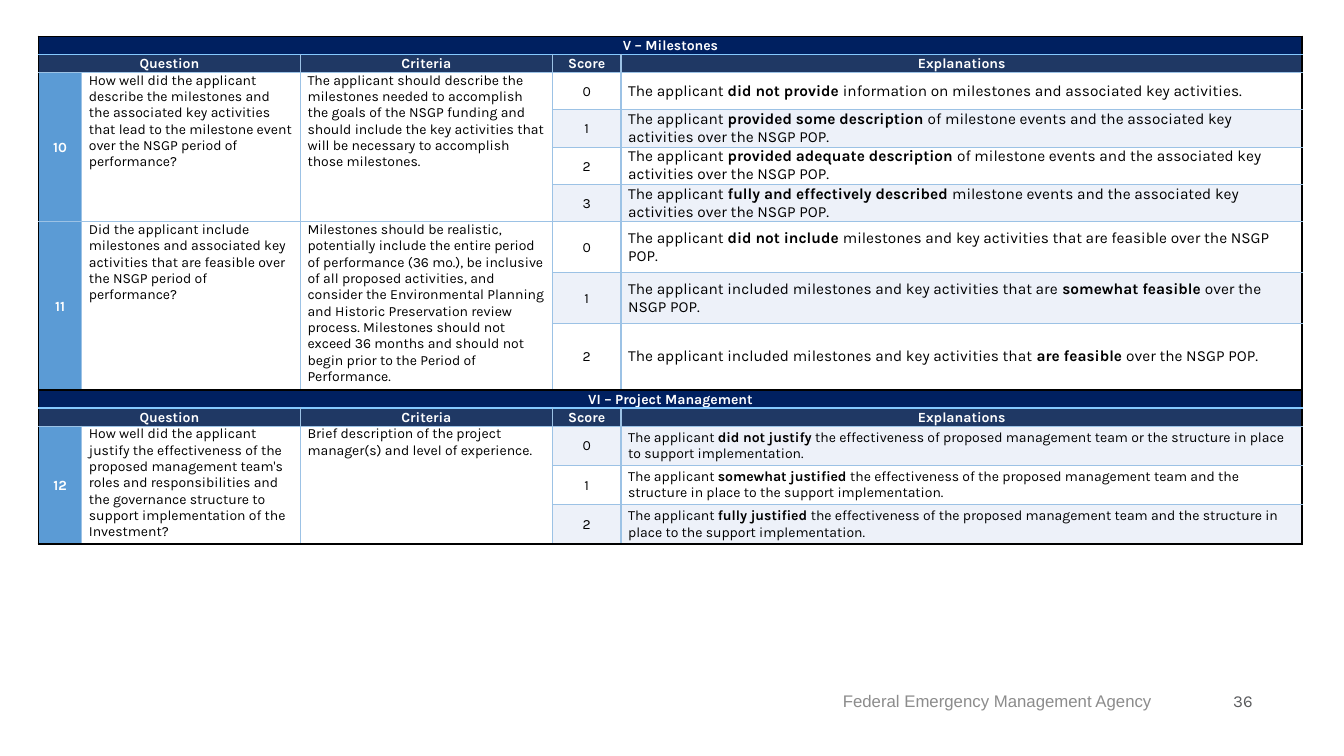
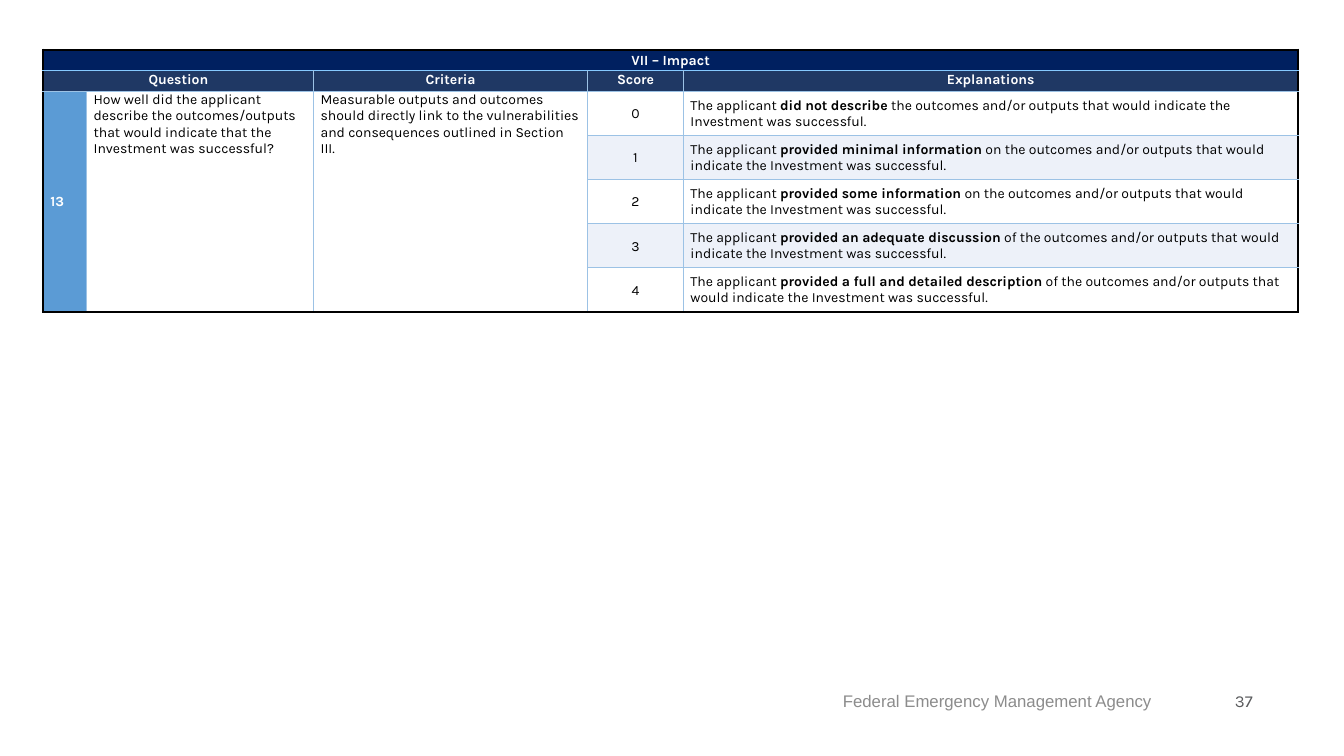
from dataclasses import dataclass, replace
from itertools import product

from pptx import Presentation
from pptx.dml.color import RGBColor as RGB
from pptx.enum.text import MSO_ANCHOR as ANCHOR, PP_ALIGN as ALIGN
from pptx.oxml import parse_xml
from pptx.oxml.ns import nsdecls
from pptx.util import Cm, Pt

NAVY = RGB(0x00, 0x20, 0x60)
DUSK = RGB(0x1F, 0x38, 0x64)
BLUE = RGB(0x5B, 0x9B, 0xD5)
PALE = RGB(0xED, 0xF1, 0xF9)
LINE = RGB(0x9C, 0xC2, 0xE5)
SKY = RGB(0x85, 0xC9, 0xFF)
BLACK = RGB(0x00, 0x00, 0x00)
WHITE = RGB(0xFF, 0xFF, 0xFF)
GREY = RGB(0x8C, 0x8C, 0x8C)
SLATE = RGB(0x5A, 0x5B, 0x5D)
FONT = "Karla"
NO_STYLE = "{2D5ABB26-0587-4C30-8999-92F81FD0307C}"
HEADS = [("Question", 0, 1), ("Criteria", 2, 2), ("Score", 3, 3), ("Explanations", 4, 4)]


@dataclass
class Style:
    """Look of a table cell."""
    fill: RGB = None
    color: RGB = BLACK
    bold: bool = False
    align: ALIGN = ALIGN.LEFT
    anchor: ANCHOR = ANCHOR.MIDDLE
    pad: float = 0.18
    size: int = 10
    space: float = 1.0


@dataclass
class Item:
    """One scored question; asterisks in a level enclose bold words."""
    number: str
    ask: str
    rule: str
    height: float
    levels: list
    size: int = 10


@dataclass
class Sheet:
    """Place, column widths and cell habits of one score table."""
    left: float
    top: float
    cols: list
    head: float
    pad: float
    anchor: ANCHOR
    align: ALIGN
    topics: list


MILES = [
    Item("10",
         "How well did the applicant describe the milestones and the associated key activities "
         "that lead to the milestone event over the NSGP period of performance?",
         "The applicant should describe the milestones needed to accomplish the goals of the NSGP "
         "funding and should include the key activities that will be necessary to accomplish "
         "those milestones.",
         0.94,
         ["The applicant *did not provide *information on milestones and associated key activities.",
          "The applicant *provided some description *of milestone events and the associated key "
          "activities over the NSGP POP.",
          "The applicant *provided adequate description *of milestone events and the associated key "
          "activities over the NSGP POP.",
          "The applicant *fully and effectively described *milestone events and the associated key "
          "activities over the NSGP POP."], 11),
    Item("11",
         "Did the applicant include milestones and associated key activities that are feasible "
         "over the NSGP period of performance?",
         "Milestones should be realistic, potentially include the entire period of performance "
         "(36 mo.), be inclusive of all proposed activities, and consider the Environmental "
         "Planning and Historic Preservation review process. Milestones should not exceed 36 months "
         "and should not begin prior to the Period of Performance.",
         1.28,
         ["The applicant *did not include *milestones and key activities that are feasible over the "
          "NSGP POP.",
          "The applicant included milestones and key activities that are *somewhat feasible *over "
          "the NSGP POP.",
          "The applicant included milestones and key activities that *are feasible *over the NSGP "
          "POP."], 11),
]
MANAGE = [
    Item("12",
         "How well did the applicant justify the effectiveness of the proposed management team's "
         "roles and responsibilities and the governance structure to support implementation of the "
         "Investment?",
         "Brief description of the project manager(s) and level of experience.",
         0.99,
         ["The applicant *did not justify *the effectiveness of proposed management team or the "
          "structure in place to support implementation.",
          "The applicant *somewhat justified *the effectiveness of the proposed management team and "
          "the structure in place to the support implementation.",
          "The applicant *fully justified *the effectiveness of the proposed management team and "
          "the structure in place to the support implementation."]),
]
IMPACT = [
    Item("13",
         "How well did the applicant describe the outcomes/outputs that would indicate that the "
         "Investment was successful?",
         "Measurable outputs and outcomes should directly link to the vulnerabilities and "
         "consequences outlined in Section III.",
         1.11,
         ["The applicant *did not describe *the outcomes and/or outputs that would indicate the "
          "Investment was successful.",
          "The applicant *provided minimal information *on the outcomes and/or outputs that would "
          "indicate the Investment was successful.",
          "The applicant *provided some information *on the outcomes and/or outputs that would "
          "indicate the Investment was successful.",
          "The applicant *provided an adequate discussion *of the outcomes and/or outputs that "
          "would indicate the Investment was successful.",
          "The applicant *provided a full and detailed description *of the outcomes and/or outputs "
          "that would indicate the Investment was successful."]),
]
SHEETS = [
    Sheet(0.97, 0.92, [1.09, 5.51, 6.35, 1.73, 17.17], 0.43, 0.08, ANCHOR.MIDDLE, ALIGN.CENTER,
          [("V – Milestones", MILES), ("VI – Project Management", MANAGE)]),
    Sheet(1.09, 1.25, [1.09, 5.72, 6.91, 2.41, 15.49], 0.53, 0.18, ANCHOR.TOP, ALIGN.LEFT,
          [("VII – Impact", IMPACT)]),
]


def edge(cell, side, color):
    """Draw one border of a cell; black ones are thicker."""
    width = Pt(1.5 if color == BLACK else 1)
    cell._tc.get_or_add_tcPr().append(parse_xml(
        f'<a:ln{side} {nsdecls("a")} w="{width}"><a:solidFill><a:srgbClr val="{color}"/>'
        f'</a:solidFill></a:ln{side}>'))


def frame(table, area, band):
    """Border a block of cells, black along the rim of its section."""
    top, left, low, right = area
    first, last = band
    tints = {
        "L": BLACK if left == 0 else LINE,
        "R": BLACK if right == len(table.columns) - 1 else LINE,
        "T": BLACK if top == first else SKY if top == first + 1 else LINE,
        "B": BLACK if low == last else SKY if low == first else LINE,
    }
    for row, col in product(range(top, low + 1), range(left, right + 1)):
        rim = {"L": col == left, "R": col == right, "T": row == top, "B": row == low}
        for side, tint in tints.items():
            if rim[side] or (row, col) == (top, left):
                edge(table.cell(row, col), side, tint)


def write(para, text, style):
    """Fill a paragraph, with words between asterisks in bold."""
    para.alignment = style.align
    para.line_spacing = style.space
    font = para.font
    font.name, font.size, font.bold = FONT, Pt(style.size), style.bold
    font.color.rgb = style.color
    for spot, words in enumerate(text.split("*")):
        run = para.add_run()
        run.text = words
        if spot % 2:
            run.font.bold = True


def put(table, area, band, text, style):
    """Merge, border, fill and write one block of cells."""
    top, left, low, right = area
    cell = table.cell(top, left)
    if (top, left) != (low, right):
        cell.merge(table.cell(low, right))
    frame(table, area, band)
    if style.fill is None:
        cell.fill.background()
    else:
        cell.fill.solid()
        cell.fill.fore_color.rgb = style.fill
    cell.vertical_anchor = style.anchor
    cell.margin_left = cell.margin_right = Cm(style.pad)
    cell.margin_top = cell.margin_bottom = 0
    write(cell.text_frame.paragraphs[0], text, style)


def add_grid(slide, sheet):
    """Add the score table of one sheet."""
    tall = []
    for _, items in sheet.topics:
        tall += [sheet.head] * 2
        tall += [item.height for item in items for _ in item.levels]
    shape = slide.shapes.add_table(len(tall), len(sheet.cols), Cm(sheet.left), Cm(sheet.top),
                                   Cm(sum(sheet.cols)), Cm(sum(tall)))
    table = shape.table
    table.first_row = table.horz_banding = False
    table._tbl.tblPr.find("{*}tableStyleId").text = NO_STYLE
    for col, width in zip(table.columns, sheet.cols):
        col.width = Cm(width)
    for row, height in zip(table.rows, tall):
        row.height = Cm(height)

    mid = Style(align=ALIGN.CENTER, pad=sheet.pad, space=1.07)
    title = replace(mid, fill=NAVY, color=WHITE, bold=True)
    head = replace(title, fill=DUSK, anchor=sheet.anchor)
    mark = replace(title, fill=BLUE, align=sheet.align)
    note = Style(anchor=ANCHOR.TOP)
    row = count = 0
    for name, items in sheet.topics:
        band = row, row + 1 + sum(len(item.levels) for item in items)
        put(table, (row, 0, row, 4), band, name, title)
        for text, left, right in HEADS:
            put(table, (row + 1, left, row + 1, right), band, text, head)
        row += 2
        for item in items:
            low = row + len(item.levels) - 1
            for col, text, style in [(0, item.number, mark), (1, item.ask, note),
                                     (2, item.rule, note)]:
                put(table, (row, col, low, col), band, text, style)
            for score, text in enumerate(item.levels):
                fill = PALE if count % 2 else None
                put(table, (row, 3, row, 3), band, str(score), replace(mid, fill=fill))
                put(table, (row, 4, row, 4), band, text, Style(fill=fill, size=item.size))
                row += 1
                count += 1


def add_foot(slide, left, width, text, name, color):
    """Add one right-aligned text of the footer."""
    box = slide.shapes.add_textbox(Cm(left), Cm(17.15), Cm(width), Cm(1.02))
    body = box.text_frame
    body.word_wrap = True
    body.vertical_anchor = ANCHOR.MIDDLE
    para = body.paragraphs[0]
    para.text = text
    para.alignment = ALIGN.RIGHT
    para.font.name, para.font.size = name, Pt(12)
    para.font.color.rgb = color


def main():
    """Build and save the deck."""
    deck = Presentation()
    deck.slide_width, deck.slide_height = Cm(33.87), Cm(19.05)
    for page, sheet in enumerate(SHEETS, 36):
        slide = deck.slides.add_slide(deck.slide_layouts[6])
        add_foot(slide, 16.93, 12.35, "Federal Emergency Management Agency", "Arial", GREY)
        add_foot(slide, 29.28, 2.54, str(page), FONT, SLATE)
        add_grid(slide, sheet)
    deck.save("out.pptx")


if __name__ == "__main__":
    main()
